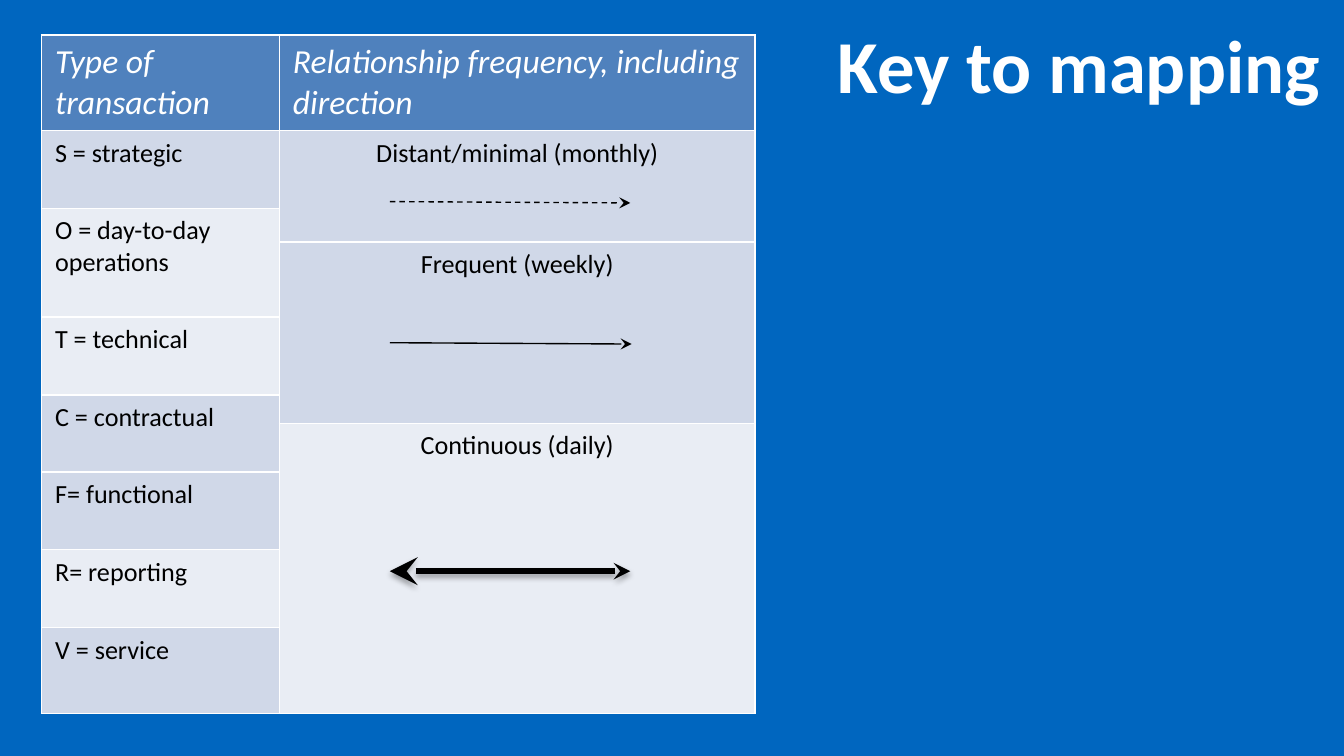
from lxml import etree
from pptx import Presentation
from pptx.dml.color import RGBColor
from pptx.enum.dml import MSO_LINE
from pptx.enum.shapes import MSO_CONNECTOR
from pptx.enum.text import MSO_ANCHOR, PP_ALIGN
from pptx.oxml.ns import qn
from pptx.util import Inches, Pt

STRAIGHT = MSO_CONNECTOR.STRAIGHT
DASH = MSO_LINE.DASH
MIDDLE = MSO_ANCHOR.MIDDLE
LEFT, CENTER, RIGHT = PP_ALIGN.LEFT, PP_ALIGN.CENTER, PP_ALIGN.RIGHT

BACKGROUND = RGBColor(0x00, 0x66, 0xBF)
HEADER_BLUE = RGBColor(0x4F, 0x81, 0xBD)
BAND_DARK = RGBColor(0xD0, 0xD8, 0xE8)
BAND_LIGHT = RGBColor(0xE9, 0xED, 0xF4)
WHITE = RGBColor(0xFF, 0xFF, 0xFF)
BLACK = RGBColor(0x00, 0x00, 0x00)
FONT = "Calibri"


def format_text(paragraph, size, color, alignment, bold=False, italic=False):
    paragraph.alignment = alignment
    for run in paragraph.runs:
        run.font.name = FONT
        run.font.size = Pt(size)
        run.font.color.rgb = color
        run.font.bold = bold
        run.font.italic = italic


presentation = Presentation()
presentation.slide_width = Inches(10)
presentation.slide_height = Inches(10) * 9 // 16
slide = presentation.slides.add_slide(presentation.slide_layouts[5])
slide.background.fill.solid()
slide.background.fill.fore_color.rgb = BACKGROUND

title = slide.shapes.title
title.left, title.top = Inches(1.52), Inches(0)
title.width, title.height = Inches(8.4), Inches(0.94)
title.text_frame.text = "Key to mapping"
title.text_frame.vertical_anchor = MIDDLE
format_text(title.text_frame.paragraphs[0], 40, WHITE, RIGHT, bold=True)

column_widths = [1.77, 3.54]
row_heights = [0.71, 0.58, 0.25, 0.56, 0.58, 0.21, 0.36, 0.58, 0.58, 0.64]
table = slide.shapes.add_table(
    len(row_heights), len(column_widths), Inches(0.31), Inches(0.26),
    Inches(sum(column_widths)), Inches(sum(row_heights))).table
for column, width in zip(table.columns, column_widths):
    column.width = Inches(width)
for row, height in zip(table.rows, row_heights):
    row.height = Inches(height)

entries = [
    (0, 0, 1, "Type of transaction", HEADER_BLUE),
    (0, 1, 1, "Relationship frequency, including direction", HEADER_BLUE),
    (1, 0, 1, "S = strategic", BAND_DARK),
    (2, 0, 2, "O = day-to-day operations", BAND_LIGHT),
    (4, 0, 1, "T = technical", BAND_LIGHT),
    (5, 0, 2, "C = contractual", BAND_DARK),
    (7, 0, 1, "F= functional", BAND_DARK),
    (8, 0, 1, "R= reporting", BAND_LIGHT),
    (9, 0, 1, "V = service", BAND_DARK),
    (1, 1, 2, "Distant/minimal (monthly)", BAND_DARK),
    (3, 1, 3, "Frequent (weekly)", BAND_DARK),
    (6, 1, 4, "Continuous (daily)", BAND_LIGHT),
]
for row, column, span, text, color in entries:
    is_header = row == 0
    cell = table.cell(row, column)
    if span > 1:
        cell.merge(table.cell(row + span - 1, column))
    cell.text_frame.text = text
    format_text(cell.text_frame.paragraphs[0],
                18 if is_header else 14,
                WHITE if is_header else BLACK,
                CENTER if column == 1 and not is_header else LEFT,
                italic=is_header)
    cell.fill.solid()
    cell.fill.fore_color.rgb = color

arrows = [
    (1.5, 4.69, 1.51, 0.75, True, False),
    (2.55, 4.7, 2.56, 0.75, False, False),
    (4.25, 4.69, 4.25, 3, False, True),
]
for start_y, end_x, end_y, width, dashed, double_headed in arrows:
    arrow = slide.shapes.add_connector(
        STRAIGHT, Inches(2.9), Inches(start_y), Inches(end_x), Inches(end_y))
    arrow.line.color.rgb = BLACK
    arrow.line.width = Pt(width)
    if dashed:
        arrow.line.dash_style = DASH
    line = arrow.line._get_or_add_ln()
    if double_headed:
        etree.SubElement(line, qn("a:headEnd"), type="stealth", w="lg", len="lg")
    etree.SubElement(line, qn("a:tailEnd"), type="stealth")
    effects = etree.SubElement(arrow._element.spPr, qn("a:effectLst"))
    if double_headed:
        shadow = etree.SubElement(
            effects, qn("a:outerShdw"), blurRad=str(Pt(3.1)), dist=str(Pt(1.8)),
            dir="5400000", rotWithShape="0")
        shadow_color = etree.SubElement(shadow, qn("a:srgbClr"), val=str(BLACK))
        etree.SubElement(shadow_color, qn("a:alpha"), val="35000")

presentation.save("out.pptx")
